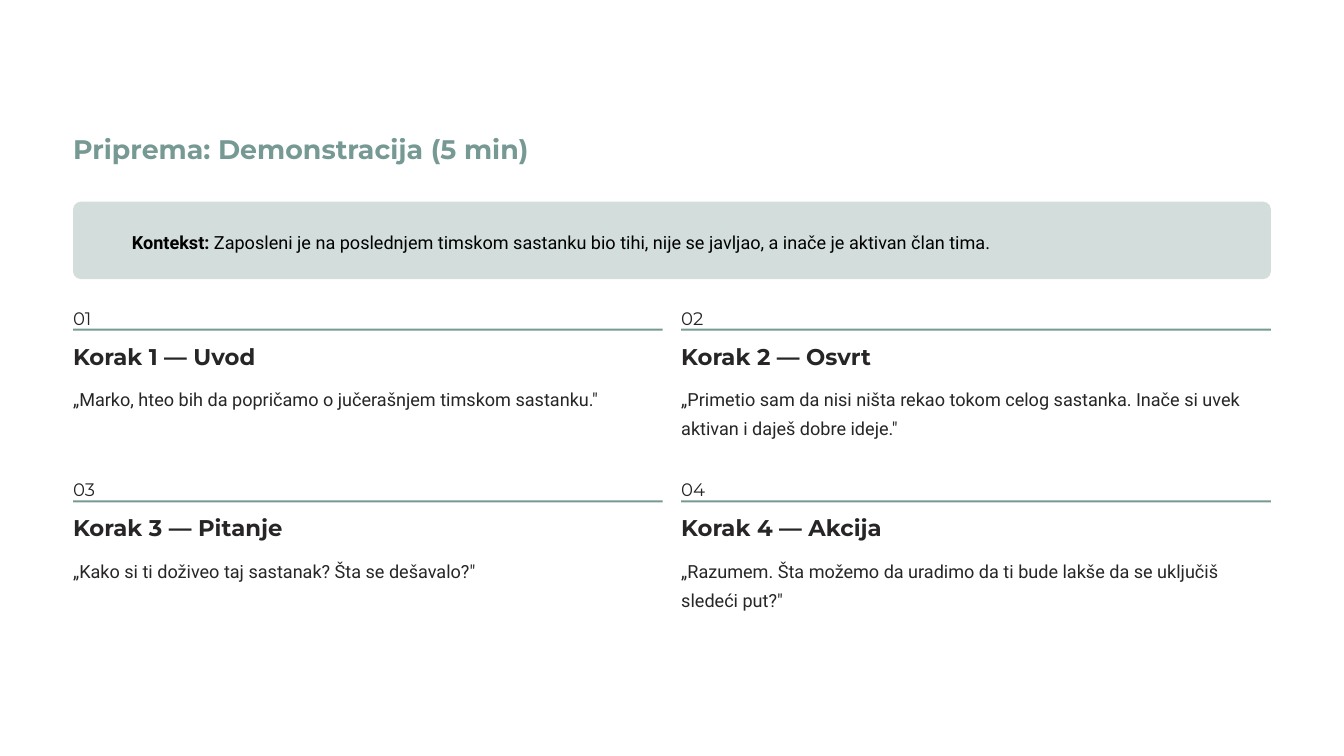
"""Build the slide that prepares a four-step feedback demonstration."""
from pptx import Presentation
from pptx.dml.color import RGBColor
from pptx.enum.shapes import MSO_SHAPE
from pptx.util import Cm, Pt

TITLE = "Priprema: Demonstracija (5 min)"
CONTEXT = [
    ("Kontekst:", True),
    (" Zaposleni je na poslednjem timskom sastanku bio tihi, nije se javljao, "
     "a inače je aktivan član tima.", False),
]
STEPS = [
    ("Korak 1 — Uvod", '„Marko, hteo bih da popričamo o jučerašnjem timskom sastanku."'),
    ("Korak 2 — Osvrt", '„Primetio sam da nisi ništa rekao tokom celog sastanka. '
                        'Inače si uvek aktivan i daješ dobre ideje."'),
    ("Korak 3 — Pitanje", '„Kako si ti doživeo taj sastanak? Šta se dešavalo?"'),
    ("Korak 4 — Akcija", '„Razumem. Šta možemo da uradimo da ti bude lakše '
                         'da se uključiš sledeći put?"'),
]

COLORS = {"paper": "FFFFFF", "sage": "769993", "mist": "D3DEDC",
          "ink": "272525", "black": "000000"}
FORMATS = {
    "title": {"name": "Montserrat", "size": 23, "color": "sage", "line": 29},
    "context": {"name": "Roboto", "size": 15.5, "color": "black", "line": 25},
    "number": {"name": "Montserrat", "size": 15.5, "color": "ink", "line": 25},
    "heading": {"name": "Montserrat", "size": 19.5, "color": "ink", "line": 24},
    "body": {"name": "Roboto", "size": 15.5, "color": "ink", "line": 25},
}

SLIDE_W, SLIDE_H = 40.64, 22.86
LEFT, TOP = 2.21, 9.06
FULL_W, COL_W = 36.22, 17.83
COL_STEP, ROW_STEP = FULL_W - COL_W, 5.19


def rgb(key):
    return RGBColor.from_string(COLORS[key])


def add_text(s, box, runs, kind, wrap=False):
    fmt = FORMATS[kind]
    tf = s.shapes.add_textbox(*map(Cm, box)).text_frame
    tf.word_wrap = wrap
    for side in ("left", "top", "right", "bottom"):
        setattr(tf, f"margin_{side}", 0)
    p = tf.paragraphs[0]
    p.line_spacing = Pt(fmt["line"])
    for text, bold in runs:
        r = p.add_run()
        r.text = text
        values = {"name": fmt["name"], "size": Pt(fmt["size"]), "bold": bold}
        for attr, value in values.items():
            setattr(r.font, attr, value)
        r.font.color.rgb = rgb(fmt["color"])


def add_block(s, kind, box, color):
    sp = s.shapes.add_shape(kind, *map(Cm, box))
    sp.shadow.inherit = False
    sp.fill.solid()
    sp.fill.fore_color.rgb = rgb(color)
    sp.line.fill.background()
    return sp


def add_step(s, i, heading, body):
    row, col = divmod(i, 2)
    x, y = LEFT + col * COL_STEP, TOP + row * ROW_STEP
    add_text(s, (x, y, 0.8, 0.69), [(f"{i + 1:02}", False)], "number")
    add_block(s, MSO_SHAPE.RECTANGLE, (x, y + 0.88, COL_W, 0.06), "sage")
    add_text(s, (x, y + 1.27, 6.88, 0.86), [(heading, True)], "heading")
    add_text(s, (x, y + 2.46, COL_W, 1.75), [(body, False)], "body", wrap=True)


def main():
    prs = Presentation()
    prs.slide_width, prs.slide_height = Cm(SLIDE_W), Cm(SLIDE_H)
    s = prs.slides.add_slide(prs.slide_layouts[6])

    add_block(s, MSO_SHAPE.RECTANGLE, (0, 0, SLIDE_W, SLIDE_H), "paper")
    add_text(s, (LEFT, 3.96, 14.02, 1.04), [(TITLE, True)], "title")
    card = add_block(s, MSO_SHAPE.ROUNDED_RECTANGLE, (LEFT, 6.1, FULL_W, 2.34), "mist")
    card.adjustments[0] = 0.1
    add_text(s, (3.99, 6.78, 33.88, 0.89), CONTEXT, "context")
    for i, (heading, body) in enumerate(STEPS):
        add_step(s, i, heading, body)
    prs.save("out.pptx")


if __name__ == "__main__":
    main()
